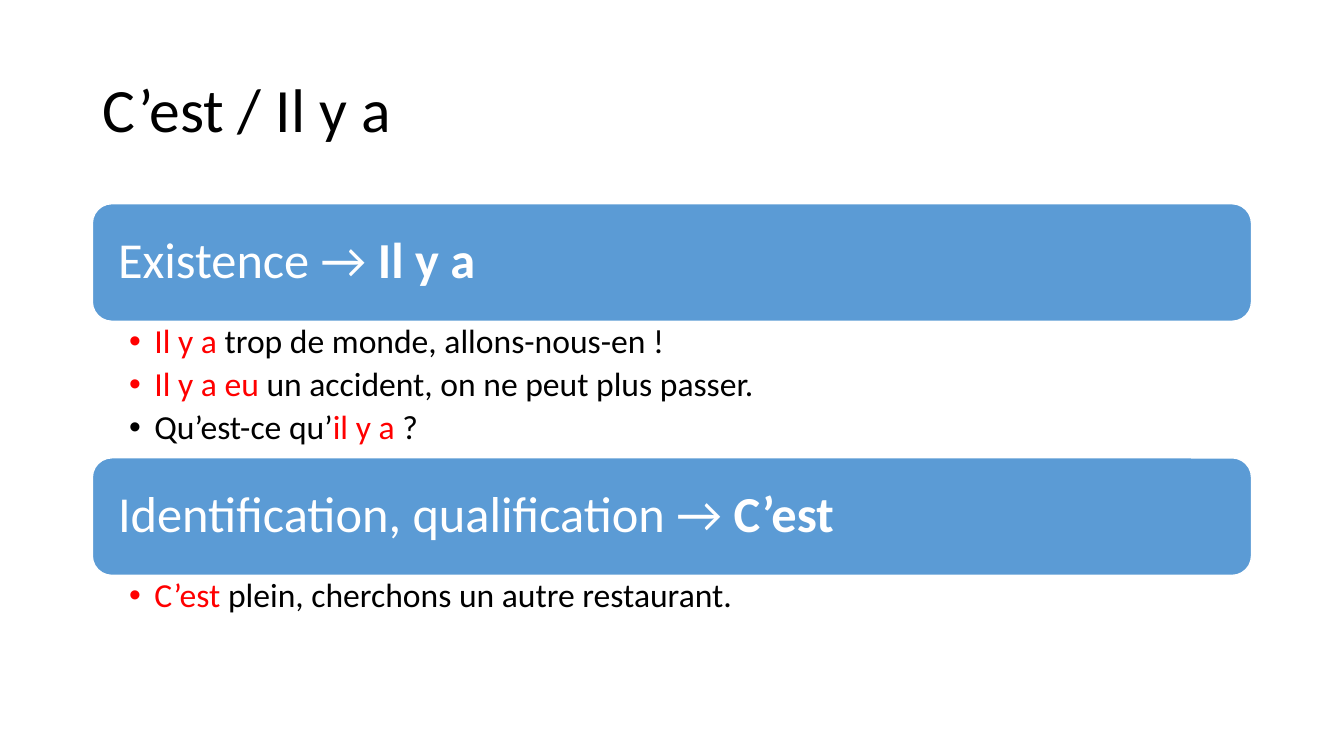
from pptx import Presentation
from pptx.dml.color import RGBColor
from pptx.enum.shapes import MSO_SHAPE
from pptx.enum.text import MSO_ANCHOR, MSO_AUTO_SIZE, PP_ALIGN
from pptx.oxml.ns import qn
from pptx.util import Pt
from lxml import etree

ROUND = MSO_SHAPE.ROUNDED_RECTANGLE
MIDDLE, TOP = MSO_ANCHOR.MIDDLE, MSO_ANCHOR.TOP
LEFT = PP_ALIGN.LEFT
FIXED = MSO_AUTO_SIZE.NONE

PX = 9525
THEME = {
    "font": "Calibri",
    "black": RGBColor(0, 0, 0),
    "white": RGBColor(255, 255, 255),
    "red": RGBColor(255, 0, 0),
    "blue": RGBColor(0x5B, 0x9B, 0xD5),
    "title": Pt(44),
    "head": Pt(36),
    "item": Pt(24),
}

# Each section: heading, bold end of heading, list height, list items.
# An item is a row of (text, colour) pieces.
SECTIONS = [
    ("Existence → ", "Il y a", 130, [
        [("Il y a ", "red"), ("trop de monde, allons-nous-en !", "black")],
        [("Il y a eu ", "red"),
         ("un accident, on ne peut plus passer.", "black")],
        [("Qu’est-ce qu’", "black"), ("il y a ", "red"), ("?", "black")],
    ]),
    ("Identification, qualification → ", "C’est", 99, [
        [("C’est", "red"),
         (" plein, cherchons un autre restaurant.", "black")],
    ]),
]
SIDE, WIDTH = 88, 1104
START, STEP, BAR = 194, 242, 112


def place(shape, top, height, anchor, pads):
    """Put a shape in the column; pads are left, top, right, bottom in px."""
    shape.left, shape.top = SIDE * PX, top * PX
    shape.width, shape.height = WIDTH * PX, height * PX
    frame = shape.text_frame
    frame.word_wrap = True
    frame.auto_size = FIXED
    frame.vertical_anchor = anchor
    (frame.margin_left, frame.margin_top,
     frame.margin_right, frame.margin_bottom) = [pad * PX for pad in pads]
    return frame


def write(para, pieces, size):
    """Fill a paragraph with (text, colour, bold) pieces."""
    para.alignment = LEFT
    para.line_spacing = 0.9
    para.space_before = Pt(0)
    for text, color, bold in pieces:
        run = para.add_run()
        run.text = text
        run.font.name = THEME["font"]
        run.font.size = THEME[size]
        run.font.bold = bold
        run.font.color.rgb = THEME[color]


deck = Presentation()
deck.slide_width, deck.slide_height = 1280 * PX, 720 * PX
slide = deck.slides.add_slide(deck.slide_layouts[3])

frame = place(slide.shapes.title, 38, 139, MIDDLE, (10, 5, 10, 5))
write(frame.paragraphs[0], [("C’est / Il y a", "black", False)], "title")

for order, (head, strong, height, items) in enumerate(SECTIONS):
    top = START + order * STEP
    bar = slide.shapes.add_shape(ROUND, 0, 0, PX, PX)
    bar.shadow.inherit = False
    bar.fill.solid()
    bar.fill.fore_color.rgb = THEME["blue"]
    bar.line.color.rgb = THEME["white"]
    bar.line.width = Pt(1)
    frame = place(bar, top, BAR, MIDDLE, (19, 14, 19, 14))
    write(frame.paragraphs[0],
          [(head, "white", False), (strong, "white", True)], "head")

    body = slide.placeholders[order + 1]
    frame = place(body, top + BAR, height, TOP, (35, 3, 18, 3))
    for row, item in enumerate(items):
        para = frame.add_paragraph() if row else frame.paragraphs[0]
        para.level = 1
        write(para, [(text, color, False) for text, color in item], "item")
        para.space_after = Pt(4.8)
        props = para._p.get_or_add_pPr()
        props.set("marL", str(24 * PX))
        props.set("indent", str(-24 * PX))
        font = etree.SubElement(props, qn("a:buFont"))
        font.set("typeface", "Arial")
        etree.SubElement(props, qn("a:buChar")).set("char", "•")

deck.save("out.pptx")
